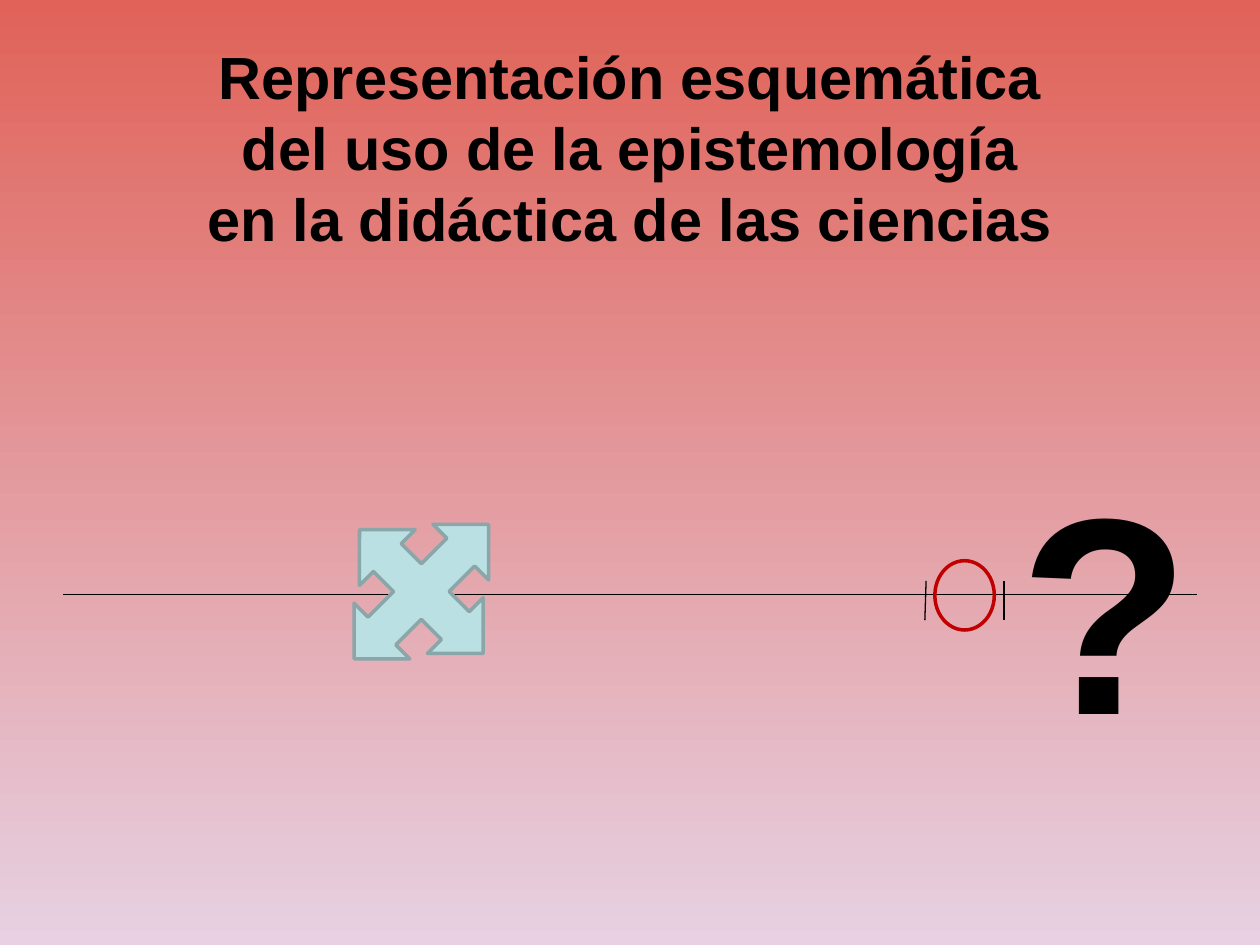
from dataclasses import dataclass

from lxml.etree import SubElement
from pptx import Presentation
from pptx.dml.color import RGBColor
from pptx.enum.shapes import MSO_CONNECTOR, MSO_SHAPE
from pptx.enum.text import MSO_ANCHOR, PP_ALIGN
from pptx.oxml.ns import qn
from pptx.util import Pt


@dataclass(frozen=True)
class Theme:
    font: str = "Arial"
    ink: RGBColor = RGBColor(0x00, 0x00, 0x00)
    sky_top: RGBColor = RGBColor(0xE0, 0x62, 0x58)
    sky_bottom: RGBColor = RGBColor(0xE7, 0xD1, 0xE2)
    arrow_fill: RGBColor = RGBColor(0xBB, 0xE0, 0xE3)
    arrow_line: RGBColor = RGBColor(0x8A, 0xA6, 0xA8)
    ring: RGBColor = RGBColor(0xC0, 0x00, 0x00)
    title_size: float = 34
    question_size: float = 160
    thin: float = 0.75
    thick: float = 2


THEME = Theme()


def paint_background(slide):
    fill = slide.background.fill
    fill.gradient()
    fill.gradient_angle = 270
    for stop, color, position in zip(
        fill.gradient_stops, (THEME.sky_top, THEME.sky_bottom), (0, 1)
    ):
        stop.color.rgb = color
        stop.position = position


def style_paragraph(paragraph, size, alignment):
    paragraph.alignment = alignment
    paragraph.font.name = THEME.font
    paragraph.font.size = Pt(size)
    paragraph.font.bold = True
    paragraph.font.color.rgb = THEME.ink


def place_title(slide, left, top, width, height):
    title = slide.shapes.title
    title.left, title.top = Pt(left), Pt(top)
    title.width, title.height = Pt(width), Pt(height)
    frame = title.text_frame
    frame.vertical_anchor = MSO_ANCHOR.MIDDLE
    frame.text = (
        "Representación esquemática\v"
        "del uso de la epistemología\v"
        "en la didáctica de las ciencias"
    )
    style_paragraph(frame.paragraphs[0], THEME.title_size, PP_ALIGN.CENTER)


def add_line(slide, start_x, start_y, end_x, end_y):
    line = slide.shapes.add_connector(
        MSO_CONNECTOR.STRAIGHT, Pt(start_x), Pt(start_y), Pt(end_x), Pt(end_y)
    )
    line.line.color.rgb = THEME.ink
    line.line.width = Pt(THEME.thin)
    SubElement(line._element.spPr, qn("a:effectLst"))


def add_figure(slide, preset, left, top, width, height, line_color, fill_color=None):
    shape = slide.shapes.add_shape(preset, Pt(left), Pt(top), Pt(width), Pt(height))
    shape.shadow.inherit = False
    if fill_color is None:
        shape.fill.background()
    else:
        shape.fill.solid()
        shape.fill.fore_color.rgb = fill_color
    shape.line.color.rgb = line_color
    shape.line.width = Pt(THEME.thick)
    return shape


def add_question_mark(slide, left, top, width, height):
    box = slide.shapes.add_textbox(Pt(left), Pt(top), Pt(width), Pt(height))
    frame = box.text_frame
    frame.word_wrap = True
    frame.margin_top = Pt(18)
    frame.text = "?"
    style_paragraph(frame.paragraphs[0], THEME.question_size, PP_ALIGN.LEFT)


def place_timeline(slide, left, top, width, height):
    axis = top + 109.5
    add_line(slide, left, axis, left + width, axis)
    for tick_top, tick_bottom in ((493.2, 492.5), (537.8, 537.8)):
        add_line(slide, left + tick_top, axis - 8, left + tick_bottom, axis + 14.5)
    arrows = add_figure(
        slide, MSO_SHAPE.QUAD_ARROW, left + 154.8, top + 53.3, 100, 108.7,
        THEME.arrow_line, THEME.arrow_fill,
    )
    arrows.rotation = 45
    add_figure(slide, MSO_SHAPE.OVAL, left + 498.2, top + 90, 34, 39.6, THEME.ring)
    add_question_mark(slide, left + 539.3, top, 103.7, height)


def main():
    presentation = Presentation()
    presentation.slide_width = Pt(720)
    presentation.slide_height = Pt(540)
    slide = presentation.slides.add_slide(presentation.slide_layouts[5])
    paint_background(slide)
    place_title(slide, 36, 21.6, 648, 124.6)
    place_timeline(slide, 36, 230.4, 648, 201.6)
    presentation.save("out.pptx")


if __name__ == "__main__":
    main()
